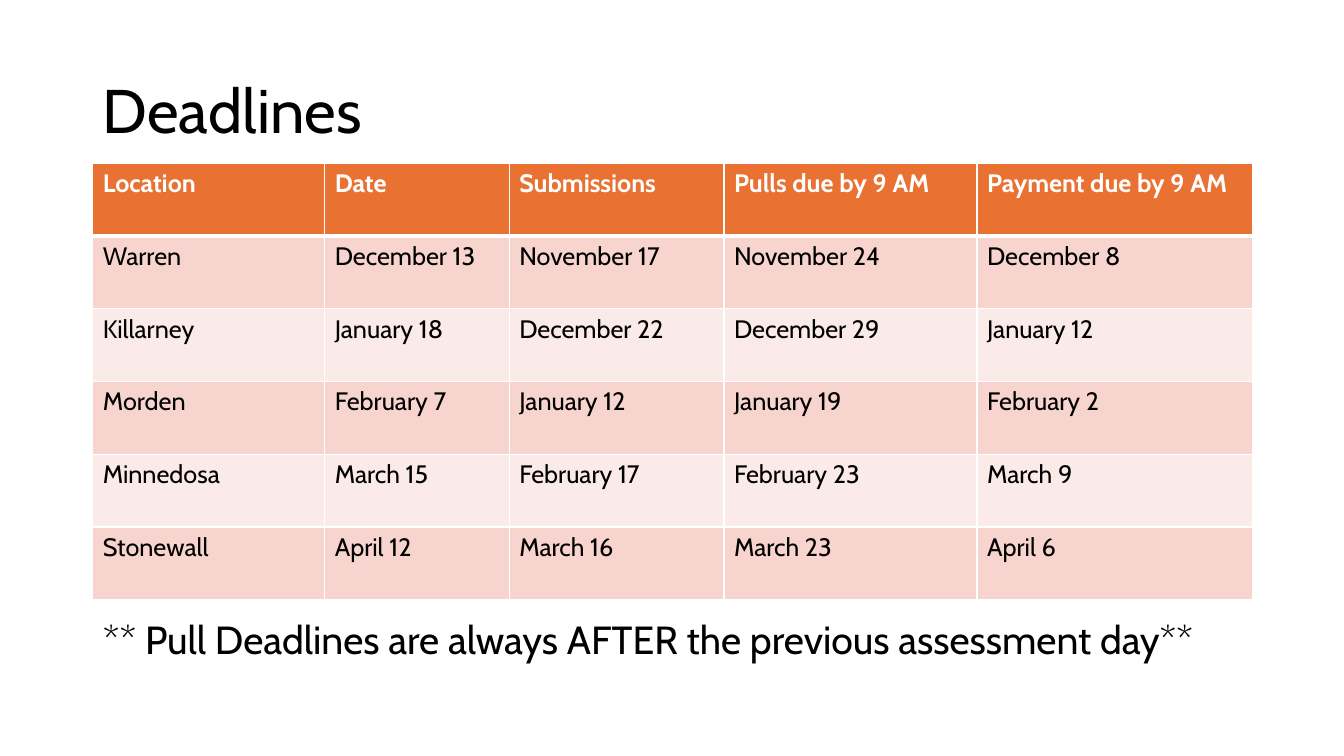
"""Build the assessment deadlines slide."""
from lxml import etree
from pptx import Presentation
from pptx import util as u
from pptx.dml.color import RGBColor
from pptx.enum import text
from pptx.oxml.ns import qn

TITLE = "Deadlines"
NOTE = "** Pull Deadlines are always AFTER the previous assessment day**"
ROWS = [
    ("Location", "Date", "Submissions", "Pulls due by 9 AM", "Payment due by 9 AM"),
    ("Warren", "December 13", "November 17", "November 24", "December 8"),
    ("Killarney", "January 18", "December 22", "December 29", "January 12"),
    ("Morden", "February 7", "January 12", "January 19", "February 2"),
    ("Minnedosa", "March 15", "February 17", "February 23", "March 9"),
    ("Stonewall", "April 12", "March 16", "March 23", "April 6"),
]
COLS = [2.3, 1.83, 2.13, 2.51, 2.73]
COLORS = {"head": "E97132", "odd": "F7D5CE", "even": "FBEBE8",
          "white": "FFFFFF", "black": "000000"}
FONT = "Cabin"
LEFT, WIDTH = 0.92, 11.5
TOP, HIGH = 1.62, 4.33


def style(para, size, color, bold=False):
    font = para.font
    font.name, font.size, font.bold = FONT, u.Pt(size), bold
    font.color.rgb = RGBColor.from_string(COLORS[color])


def place(shape, top, high):
    shape.left, shape.top = u.Inches(LEFT), u.Inches(top)
    shape.width, shape.height = u.Inches(WIDTH), u.Inches(high)


def write(shape, words, size, space):
    frame = shape.text_frame
    frame.text = words
    frame.word_wrap = True
    frame.auto_size = text.MSO_AUTO_SIZE.NONE
    frame.vertical_anchor = text.MSO_ANCHOR.MIDDLE
    para = frame.paragraphs[0]
    para.alignment = text.PP_ALIGN.LEFT
    para.line_spacing, para.space_before = space, u.Pt(0)
    style(para, size, "black")
    return para


def border(cell, side, width):
    props = cell._tc.get_or_add_tcPr()
    line = etree.SubElement(props, qn("a:ln" + side), w=str(u.Pt(width)))
    fill = etree.SubElement(line, qn("a:solidFill"))
    etree.SubElement(fill, qn("a:srgbClr"), val=COLORS["white"])


def grid(slide):
    frame = slide.shapes.add_table(len(ROWS), len(COLS), u.Inches(LEFT),
                                   u.Inches(TOP), u.Inches(WIDTH), u.Inches(HIGH))
    table = frame.table
    for col, width in zip(table.columns, COLS):
        col.width = u.Inches(width)
    for r, row in enumerate(ROWS):
        head = r == 0
        shade = "head" if head else "odd" if r % 2 else "even"
        for c, words in enumerate(row):
            cell = table.cell(r, c)
            cell.text = words
            style(cell.text_frame.paragraphs[0], 18,
                  "white" if head else "black", head)
            for side in "LRTB":
                thick = head and side == "B" or r == 1 and side == "T"
                border(cell, side, 3 if thick else 1)
            cell.fill.solid()
            cell.fill.fore_color.rgb = RGBColor.from_string(COLORS[shade])


def main():
    deck = Presentation()
    deck.slide_width, deck.slide_height = u.Inches(13.33), u.Inches(7.5)
    slide = deck.slides.add_slide(deck.slide_layouts[1])
    title, body = slide.placeholders
    place(title, 0.4, 1.45)
    write(title, TITLE, 44, 0.9)
    place(body, 6, 0.76)
    props = write(body, NOTE, 28, 0.8)._p.get_or_add_pPr()
    props.set("marL", "0")
    props.set("indent", "0")
    etree.SubElement(props, qn("a:buNone"))
    props.append(props.find(qn("a:defRPr")))
    grid(slide)
    deck.save("out.pptx")


if __name__ == "__main__":
    main()
